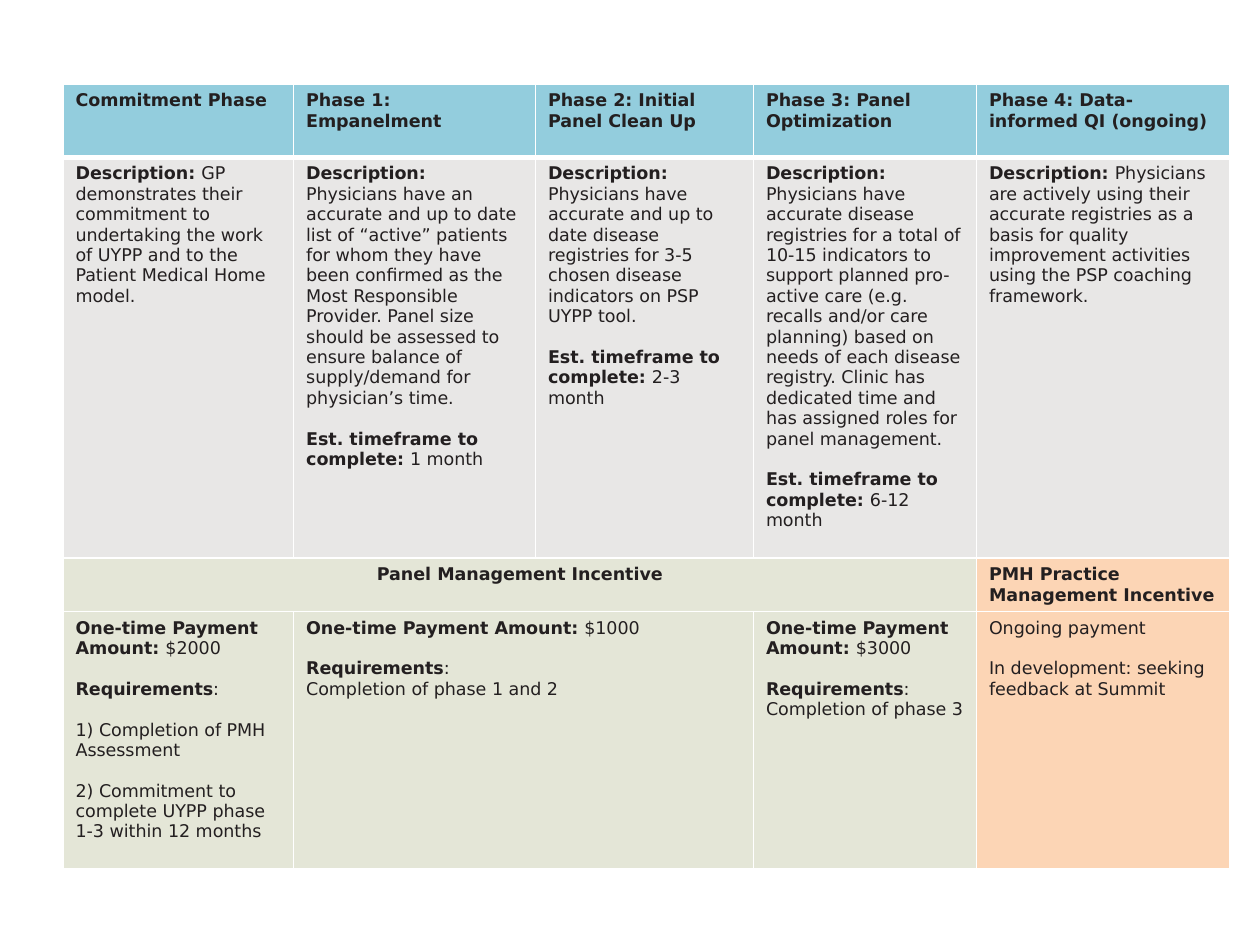
from dataclasses import dataclass

from lxml import etree
from pptx import Presentation
from pptx.dml.color import RGBColor
from pptx.enum import text
from pptx.oxml import ns
from pptx.table import Table, _Cell
from pptx.util import Inches, Pt


@dataclass(frozen=True)
class Theme:
    font: str = "DejaVu Sans"
    size: float = 10
    blank_line: float = 11.64
    ink: str = "231F20"
    border: str = "FFFFFF"
    header: str = "93CDDD"
    description: str = "E8E7E6"
    incentive: str = "E4E6D7"
    practice: str = "FCD5B5"


@dataclass(frozen=True)
class Line:
    bold: str = ""
    plain: str = ""
    gap: bool = False


@dataclass(frozen=True)
class Entry:
    row: int
    column: int
    fill: str
    lines: tuple[Line, ...]
    span: int = 1
    centered: bool = False


THEME = Theme()
COLUMN_WIDTHS = (1.83, 1.92, 1.73, 1.77, 2.01)
ROW_HEIGHTS = (0.58, 3.18, 0.42, 2.04)

PHASES = (
    ("Commitment Phase",
     "GP demonstrates their commitment to undertaking the work of UYPP and to the "
     "Patient Medical Home model.", ""),
    ("Phase 1: Empanelment",
     "Physicians have an accurate and up to date list of “active” patients for whom "
     "they have been confirmed as the Most Responsible Provider. Panel size should be "
     "assessed to ensure balance of supply/demand for physician’s time.", "1 month"),
    ("Phase 2: Initial Panel Clean Up",
     "Physicians have accurate and up to date disease registries for 3-5 chosen "
     "disease indicators on PSP UYPP tool.", "2-3 month"),
    ("Phase 3: Panel Optimization",
     "Physicians have accurate disease registries for a total of 10-15 indicators to "
     "support planned pro-active care (e.g. recalls and/or care planning) based on "
     "needs of each disease registry. Clinic has dedicated time and has assigned roles "
     "for panel management.", "6-12 month"),
    ("Phase 4: Data-informed QI (ongoing)",
     "Physicians are actively using their accurate registries as a basis for quality "
     "improvement activities using the PSP coaching framework.", ""),
)


def phase_entries() -> list[Entry]:
    entries = []
    for column, (name, description, timeframe) in enumerate(PHASES):
        lines = [Line("Description: ", description)]
        if timeframe:
            lines.append(Line("Est. timeframe to complete: ", timeframe, gap=True))
        entries.append(Entry(0, column, THEME.header, (Line(name),)))
        entries.append(Entry(1, column, THEME.description, tuple(lines)))
    return entries


def payment_entry(column: int, amount: str, requirement: str,
                  *details: Line, span: int = 1) -> Entry:
    lines = (Line("One-time Payment Amount: ", amount),
             Line("Requirements", requirement, gap=True), *details)
    return Entry(3, column, THEME.incentive, lines, span)


def incentive_entries() -> list[Entry]:
    return [
        Entry(2, 0, THEME.incentive, (Line("Panel Management Incentive"),), 4, True),
        Entry(2, 4, THEME.practice, (Line("PMH Practice Management Incentive"),)),
        payment_entry(
            0, "$2000", ":",
            Line(plain="1) Completion of PMH Assessment", gap=True),
            Line(plain="2) Commitment to complete UYPP phase 1-3 within 12 months",
                 gap=True)),
        payment_entry(1, "$1000", ":", Line(plain="Completion of phase 1 and 2"), span=2),
        payment_entry(3, "$3000", ": Completion of phase 3"),
        Entry(3, 4, THEME.practice, (
            Line(plain="Ongoing payment"),
            Line(plain="In development: seeking feedback at Summit", gap=True))),
    ]


def set_borders(cell: _Cell, widths: dict[str, float]) -> None:
    properties = cell._tc.get_or_add_tcPr()
    for side, width in widths.items():
        line = etree.SubElement(properties, ns.qn(f"a:ln{side}"), w=str(Pt(width)))
        solid = etree.SubElement(line, ns.qn("a:solidFill"))
        etree.SubElement(solid, ns.qn("a:srgbClr"), val=THEME.border)


def write_lines(cell: _Cell, entry: Entry) -> None:
    frame = cell.text_frame
    for index, line in enumerate(entry.lines):
        paragraph = frame.add_paragraph() if index else frame.paragraphs[0]
        if entry.centered:
            paragraph.alignment = text.PP_ALIGN.CENTER
        if line.gap:
            paragraph.space_before = Pt(THEME.blank_line)
        for words, bold in ((line.bold, True), (line.plain, False)):
            if words:
                run = paragraph.add_run()
                run.text = words
                run.font.name = THEME.font
                run.font.size = Pt(THEME.size)
                run.font.bold = bold
                run.font.color.rgb = RGBColor.from_string(THEME.ink)


def draw_entry(table: Table, entry: Entry) -> None:
    last = entry.column + entry.span - 1
    for column in range(entry.column, last + 1):
        cell = table.cell(entry.row, column)
        set_borders(cell, {"L": 1, "R": 1,
                           "T": 3 if entry.row == 1 else 1,
                           "B": 3 if entry.row == 0 else 1})
        cell.fill.solid()
        cell.fill.fore_color.rgb = RGBColor.from_string(entry.fill)
    origin = table.cell(entry.row, entry.column)
    if entry.span > 1:
        origin.merge(table.cell(entry.row, last))
    write_lines(origin, entry)


def main() -> None:
    presentation = Presentation()
    presentation.slide_width = Inches(10)
    presentation.slide_height = Inches(7.5)
    slide = presentation.slides.add_slide(presentation.slide_layouts[6])
    table = slide.shapes.add_table(
        len(ROW_HEIGHTS), len(COLUMN_WIDTHS), Inches(0.5), Inches(0.67),
        Inches(sum(COLUMN_WIDTHS)), Inches(sum(ROW_HEIGHTS))).table
    table.horz_banding = False
    for column, width in zip(table.columns, COLUMN_WIDTHS):
        column.width = Inches(width)
    for row, height in zip(table.rows, ROW_HEIGHTS):
        row.height = Inches(height)
    for entry in phase_entries() + incentive_entries():
        draw_entry(table, entry)
    presentation.save("out.pptx")


if __name__ == "__main__":
    main()
